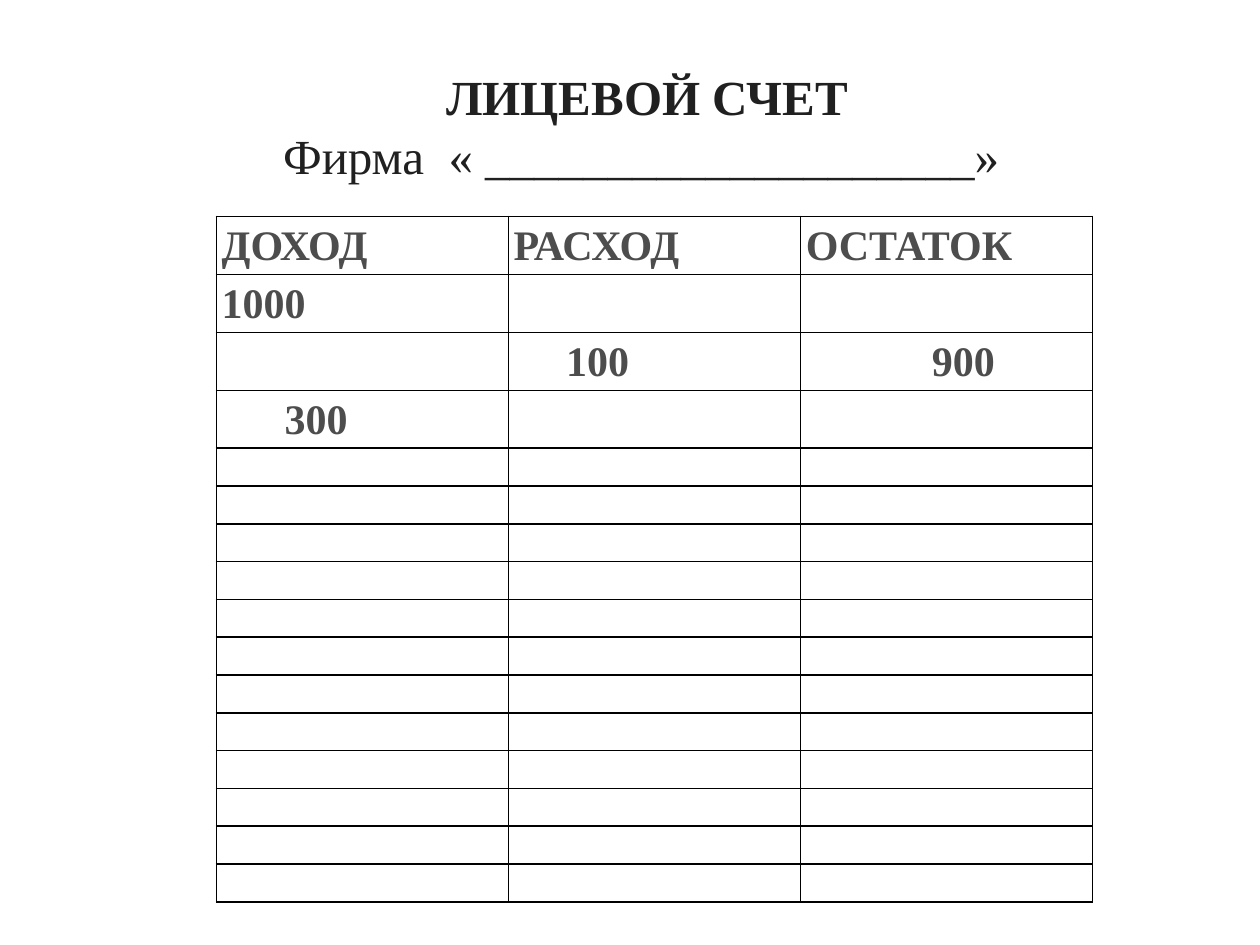
from dataclasses import dataclass

from lxml import etree
from pptx import Presentation
from pptx.dml.color import RGBColor
from pptx.enum.text import MSO_ANCHOR, MSO_AUTO_SIZE, PP_ALIGN
from pptx.oxml.ns import qn
from pptx.util import Pt

CENTER = PP_ALIGN.CENTER
MIDDLE = MSO_ANCHOR.MIDDLE
NO_AUTOFIT = MSO_AUTO_SIZE.NONE


@dataclass(frozen=True)
class Theme:
    font: str = "Times New Roman"
    paper: RGBColor = RGBColor(0xFF, 0xFF, 0xFF)
    title: RGBColor = RGBColor(0x20, 0x20, 0x20)
    entry: RGBColor = RGBColor(0x4D, 0x4D, 0x4D)
    border: str = "000000"
    title_size: int = 28
    entry_size: int = 24
    blank_size: int = 18


theme = Theme()


def style(paragraph, size, color, bold):
    font = paragraph.font
    font.name, font.size, font.bold = theme.font, Pt(size), bold
    font.color.rgb = color


def add_borders(cell):
    properties = cell._tc.get_or_add_tcPr()
    for position, side in enumerate(("lnL", "lnR", "lnT", "lnB")):
        line = etree.Element(qn(f"a:{side}"), w=str(Pt(1)))
        fill = etree.SubElement(line, qn("a:solidFill"))
        etree.SubElement(fill, qn("a:srgbClr"), val=theme.border)
        properties.insert(position, line)


prs = Presentation()
prs.slide_width, prs.slide_height = Pt(720), Pt(540)
slide = prs.slides.add_slide(prs.slide_layouts[5])

# Ledger: text and left indent of each entry, by row and column
ROWS, COLUMNS = 16, 3
FILLED_ROWS = 4
FILLED_HEIGHT, BLANK_HEIGHT = 33.12, 21.6
COLUMN_WIDTH = 166.9
entries = {
    (0, 0): ("ДОХОД", 0),
    (0, 1): ("РАСХОД", 0),
    (0, 2): ("ОСТАТОК", 0),
    (1, 0): ("1000", 0),
    (2, 1): ("100", 30),
    (2, 2): ("900", 72),
    (3, 0): ("300", 36),
}
ledger_height = FILLED_ROWS * FILLED_HEIGHT + (ROWS - FILLED_ROWS) * BLANK_HEIGHT
ledger = slide.shapes.add_table(
    ROWS, COLUMNS, Pt(123.7), Pt(123.7), Pt(COLUMNS * COLUMN_WIDTH), Pt(ledger_height)
).table
ledger.first_row = ledger.horz_banding = False
for column in ledger.columns:
    column.width = Pt(COLUMN_WIDTH)

for r, row in enumerate(ledger.rows):
    row.height = Pt(FILLED_HEIGHT if r < FILLED_ROWS else BLANK_HEIGHT)
    for c, cell in enumerate(row.cells):
        cell.margin_left = cell.margin_right = Pt(3)
        cell.margin_top = cell.margin_bottom = 0
        cell.fill.background()
        add_borders(cell)
        paragraph = cell.text_frame.paragraphs[0]
        if (r, c) in entries:
            text, indent = entries[r, c]
            paragraph.text = text
            paragraph.line_spacing = 1.15
            paragraph.space_after = Pt(10)
            paragraph._p.get_or_add_pPr().set("marL", str(Pt(indent)))
            style(paragraph, theme.entry_size, theme.entry, True)
        else:
            style(paragraph, theme.blank_size, theme.entry, False)

# Heading with the blank for the firm's name
heading = slide.shapes.title
heading.left, heading.top = Pt(152), Pt(34)
heading.width, heading.height = Pt(435.6), Pt(75)
heading.fill.solid()
heading.fill.fore_color.rgb = theme.paper
frame = heading.text_frame
frame.word_wrap = False
frame.auto_size = NO_AUTOFIT
frame.vertical_anchor = MIDDLE
frame.text = "ЛИЦЕВОЙ СЧЕТ\nФирма  « ____________________» "
for paragraph, bold in zip(frame.paragraphs, (True, False)):
    paragraph.alignment = CENTER
    style(paragraph, theme.title_size, theme.title, bold)

prs.save("out.pptx")
